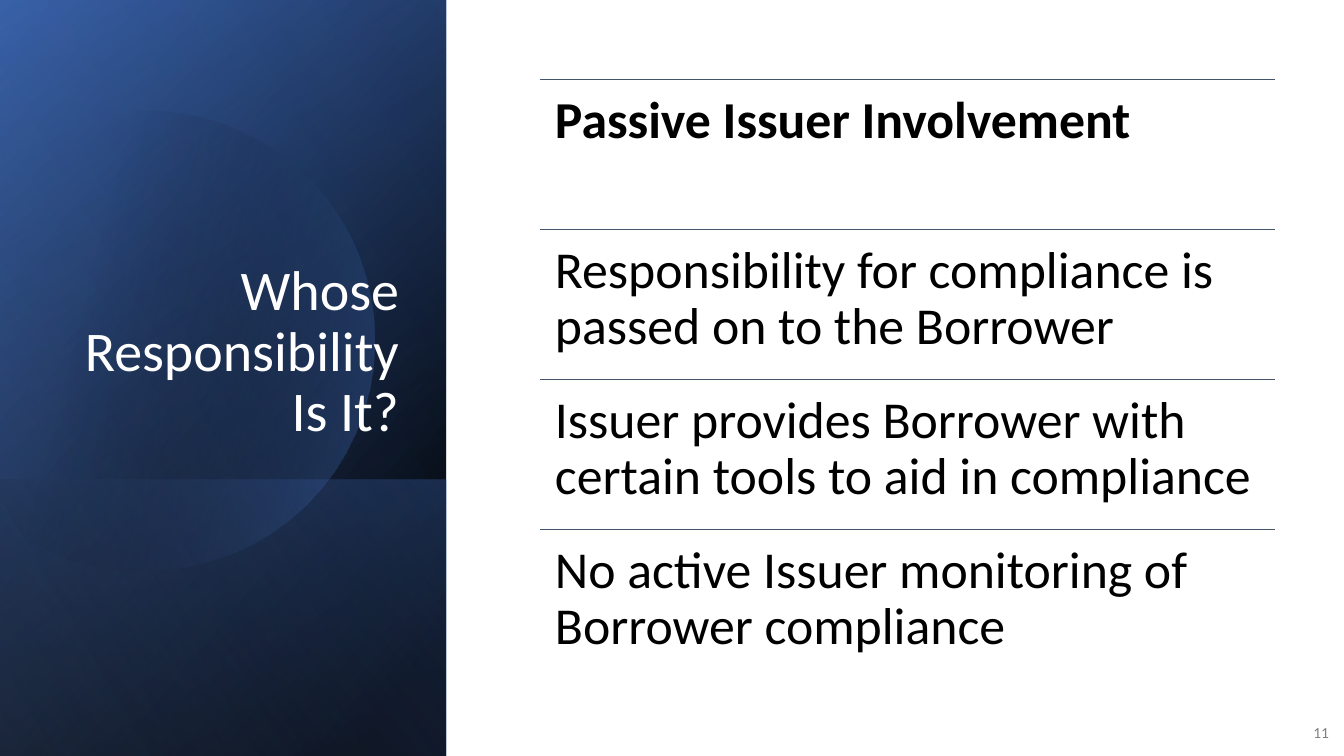
from lxml import etree
from pptx import Presentation
from pptx.dml.color import RGBColor
from pptx.enum.shapes import MSO_CONNECTOR, MSO_SHAPE
from pptx.enum.text import MSO_ANCHOR, PP_ALIGN
from pptx.oxml.ns import qn
from pptx.util import Emu, Pt

RECT = MSO_SHAPE.RECTANGLE
STRAIGHT = MSO_CONNECTOR.STRAIGHT
LEFT, RIGHT = PP_ALIGN.LEFT, PP_ALIGN.RIGHT
TOP, MIDDLE, BOTTOM = MSO_ANCHOR.TOP, MSO_ANCHOR.MIDDLE, MSO_ANCHOR.BOTTOM

BLACK = RGBColor(0x00, 0x00, 0x00)
WHITE = RGBColor(0xFF, 0xFF, 0xFF)
GREY = RGBColor(0x80, 0x80, 0x80)
SLATE = RGBColor(0x44, 0x54, 0x6A)
NAVY = RGBColor(0x2F, 0x55, 0x97)
BLUE = RGBColor(0x44, 0x72, 0xC4)
PALE = RGBColor(0x8F, 0xAA, 0xDC)

FONT = "Calibri"
WIDE, HIGH = 1344, 756
SCALE = 12192000 / WIDE
SIDE = 446
ROW_X, ROW_Y, ROW_W, ROW_H = 540, 79, 735, 150
ROWS = [
    "Passive Issuer Involvement",
    "Responsibility for compliance is passed on to the Borrower",
    "Issuer provides Borrower with certain tools to aid in compliance",
    "No active Issuer monitoring of Borrower compliance",
]

# Each panel: top, height, angle, then stops of (percent, colour, opacity).
PANELS = [
    (0, HIGH, 50, [(8, BLACK, 100), (100, NAVY, 100)]),
    (0, HIGH, 30, [(0, BLACK, 0), (99, BLUE, 46)]),
    (480, 276, 130, [(2, BLUE, 29), (100, BLACK, 30)]),
]
SHEEN = (0, HIGH, 120, [(0, BLACK, 0), (99, PALE, 11)])

DISC_START = (150, 111)
DISC_ARCS = [
    [(248, 113), (338, 178), (366, 277)],
    [(401, 400), (331, 527), (209, 562)],
    [(132, 585), (53, 566), (-3, 518)],
    [(-15, 507)],
    [(-15, 176)],
    [(0, 162)],
    [(23, 143), (50, 129), (81, 120)],
    [(104, 114), (127, 111), DISC_START],
]
STEPS = 16


def px(n):
    return Emu(round(n * SCALE))


def shade(shape, angle, stops):
    """Fill with a two-stop gradient; the angle runs clockwise."""
    shape.shadow.inherit = False
    shape.line.fill.background()
    fill = shape.fill
    fill.gradient()
    fill.gradient_angle = 360 - angle
    for stop, (spot, color, _) in zip(fill.gradient_stops, stops):
        stop.position = spot / 100
        stop.color.rgb = color
    tones = shape._element.spPr.iter(qn("a:srgbClr"))
    for tone, (_, _, solid) in zip(list(tones), stops):
        if solid < 100:
            etree.SubElement(tone, qn("a:alpha"), val=str(solid * 1000))


def add_panel(slide, top, high, angle, stops):
    """Add a mirrored quarter-turned panel that fills the side strip."""
    shift = (SIDE - high) / 2
    shape = slide.shapes.add_shape(
        RECT, px(shift), px(top - shift), px(high), px(SIDE))
    shape.rotation = 90
    shape._element.spPr.xfrm.set("flipH", "1")
    shade(shape, angle, stops)


def trace(start, arcs):
    """Turn cubic arcs and straight sides into a list of points."""
    dots = []
    for arc in arcs:
        if len(arc) == 1:
            dots += arc
        else:
            for k in range(1, STEPS + 1):
                t = k / STEPS
                u = 1 - t
                parts = (u**3, 3 * u * u * t, 3 * u * t * t, t**3)
                dots.append(tuple(
                    sum(w * p[axis] for w, p in zip(parts, [start, *arc]))
                    for axis in (0, 1)))
        start = arc[-1]
    return dots


def add_disc(slide):
    x, y = DISC_START
    pen = slide.shapes.build_freeform(px(x), px(y))
    dots = trace(DISC_START, DISC_ARCS)
    pen.add_line_segments([(px(a), px(b)) for a, b in dots], close=True)
    shade(pen.convert_to_shape(), 14, [(29, BLACK, 0), (100, BLUE, 43)])


def add_text(slide, text, box, size, color, align=LEFT, anchor=TOP,
             pad=(10, 5), bold=False, lead=None):
    shape = slide.shapes.add_textbox(*map(px, box))
    frame = shape.text_frame
    frame.word_wrap = True
    frame.vertical_anchor = anchor
    frame.margin_left = frame.margin_right = px(pad[0])
    frame.margin_top = frame.margin_bottom = px(pad[1])
    para = frame.paragraphs[0]
    para.alignment = align
    para.line_spacing = lead
    run = para.add_run()
    run.text = text
    font = run.font
    font.name, font.size, font.bold = FONT, Pt(size), bold
    font.color.rgb = color


def add_rule(slide, x, y, wide):
    rule = slide.shapes.add_connector(
        STRAIGHT, px(x), px(y), px(x + wide), px(y))
    rule.line.color.rgb = SLATE
    rule.line.width = Pt(0.5)
    etree.SubElement(rule._element.spPr, qn("a:effectLst"))


def main():
    deck = Presentation()
    deck.slide_width, deck.slide_height = px(WIDE), px(HIGH)
    slide = deck.slides.add_slide(deck.slide_layouts[6])
    for panel in PANELS:
        add_panel(slide, *panel)
    add_disc(slide)
    add_panel(slide, *SHEEN)
    add_text(slide, "Whose Responsibility Is It?", (65, 185, 344, 264),
             40, WHITE, RIGHT, BOTTOM, lead=0.9)
    add_text(slide, "11", (1290, 712, 49, 40), 11, GREY, RIGHT, MIDDLE)
    for i, text in enumerate(ROWS):
        y = ROW_Y + i * ROW_H
        add_rule(slide, ROW_X, y, ROW_W)
        add_text(slide, text, (ROW_X, y, ROW_W, ROW_H), 37, BLACK,
                 pad=(15, 15), bold=i == 0, lead=0.9)
    deck.save("out.pptx")


if __name__ == "__main__":
    main()
